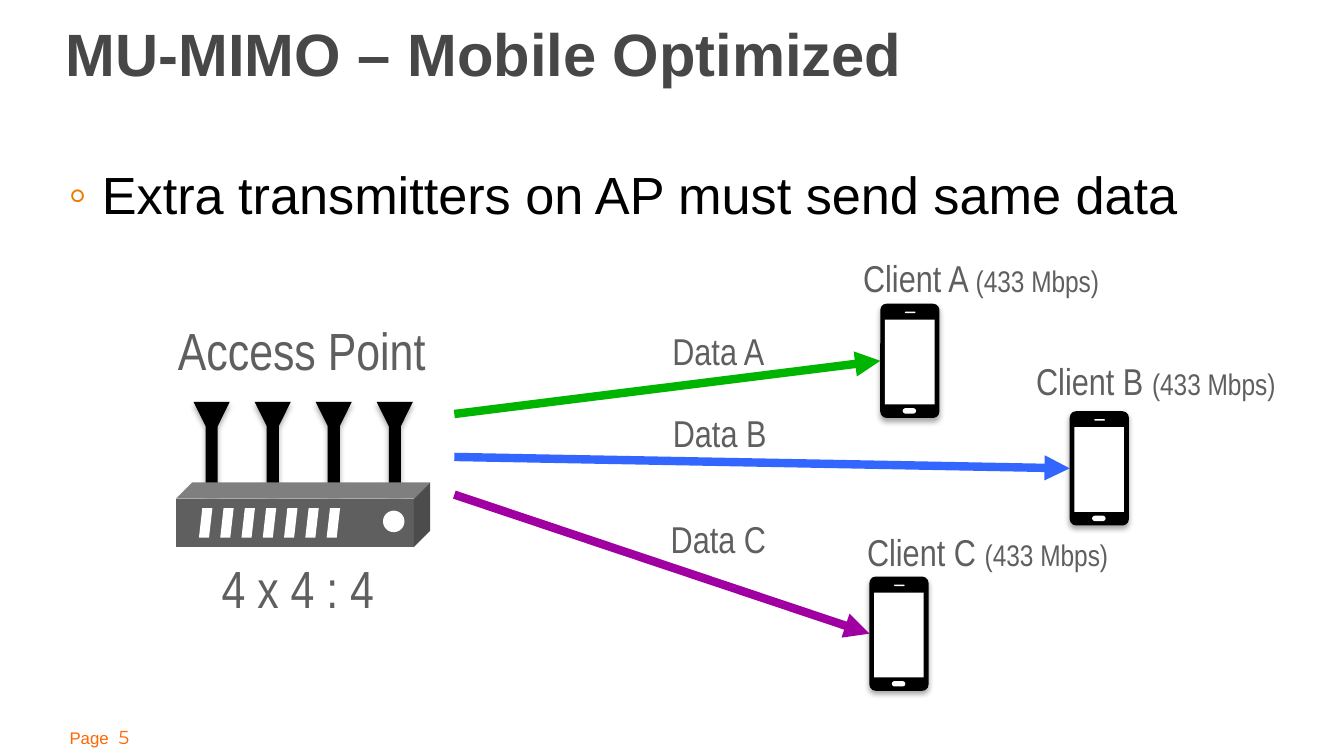
from lxml import etree
from pptx import Presentation
from pptx.dml.color import RGBColor
from pptx.enum import shapes, text
from pptx.oxml import ns
from pptx.util import Pt

COLORS = {"title": "474747", "label": "5F5F5F", "body": "000000", "bullet": "F07800",
          "page": "FF6600", "black": "000000", "white": "FFFFFF",
          "green": "00B500", "blue": "3366FF", "purple": "A000A2"}
NARROW = "Arial Narrow"

TITLE = "MU-MIMO – Mobile Optimized"
BULLET = "Extra transmitters on AP must send same data"
RATE = "(433 Mbps)"
# text, left, top, width, height, size
AP_LABELS = [("Access Point", 72.7, 167, 177.8, 41, 28),
             ("4 x 4 : 4", 99.4, 294.5, 120.2, 41, 28)]
# name, phone corner, label box, data label corner, arrow start height, colour
CLIENTS = [
    ("A", (471.6, 162.7), (439.9, 133.2, 171.4, 31.7), (334.1, 172.1), 221.8, "green"),
    ("B", (573.1, 220.3), (533.5, 188.6, 171.4, 51.1), (334.8, 216), 244.8, "blue"),
    ("C", (465.8, 308.9), (440.6, 280.1, 177.1, 55.4), (334.1, 272.9), 265, "purple"),
]
ARROW_LEFT = 243.4
DATA_SIZE = (101.5, 31.7)
PHONE_SIZE = (31.7, 61.2)
# kind, offset in phone, size, corner rounding
PHONE_PARTS = [("RECTANGLE", 2.5, 8.6, 26.6, 45.4, None),
               ("ROUNDED_RECTANGLE", 12, 56, 7.2, 2.9, 0.5),
               ("ROUNDED_RECTANGLE", 13.2, 4.3, 5.6, 0.8, 0.5)]
ANTENNA = [(0, 0), (19.4, 0), (13, 13), (13, 49.7), (6.5, 49.7), (6.5, 13)]
ANTENNA_START, ANTENNA_STEP, ANTENNA_COUNT = (103.7, 215.3), 32.7, 4
STRIPE_START, STRIPE_STEP, STRIPE_COUNT = (106.6, 272.2), 11.4, 7

presentation = Presentation()
presentation.slide_width, presentation.slide_height = Pt(720), Pt(405)
slide = presentation.slides.add_slide(presentation.slide_layouts[6])


def rgb(name):
    return RGBColor.from_string(COLORS[name])


def child(parent, tag, **attributes):
    return etree.SubElement(parent, ns.qn(tag), attributes)


def paint(shape, color, shadow=False):
    shape.fill.solid()
    shape.fill.fore_color.rgb = rgb(color)
    shape.line.fill.background()
    shape.shadow.inherit = False
    if shadow:
        effects = shape._element.spPr.find(ns.qn("a:effectLst"))
        outer = child(effects, "a:outerShdw", blurRad=str(Pt(3.1)), dist=str(Pt(1.8)),
                      dir="5400000", rotWithShape="0")
        child(child(outer, "a:srgbClr", val=COLORS["black"]), "a:alpha", val="35000")


def add_part(kind, left, top, width, height, color, rounding=None, shadow=False):
    shape = slide.shapes.add_shape(getattr(shapes.MSO_SHAPE, kind),
                                   Pt(left), Pt(top), Pt(width), Pt(height))
    if rounding is not None:
        shape.adjustments[0] = rounding
    paint(shape, color, shadow)
    return shape


def add_text(box, runs, centered=True, wrap=True, inset=3.6):
    """Each run is (text, size, font, colour, bold)."""
    frame = slide.shapes.add_textbox(*map(Pt, box)).text_frame
    frame.word_wrap = wrap
    frame.margin_top = Pt(inset)
    paragraph = frame.paragraphs[0]
    paragraph.alignment = text.PP_ALIGN.CENTER if centered else text.PP_ALIGN.LEFT
    for words, size, font, color, bold in runs:
        run = paragraph.add_run()
        run.text = words
        run.font.size, run.font.name, run.font.bold = Pt(size), font, bold
        run.font.color.rgb = rgb(color)
    return paragraph


def add_label(box, *runs):
    add_text(box, [(words, size, NARROW, "label", False) for words, size in runs])


def add_access_point():
    left, top = ANTENNA_START
    for index in range(ANTENNA_COUNT):
        points = [(Pt(left + index * ANTENNA_STEP + x), Pt(top + y)) for x, y in ANTENNA]
        builder = slide.shapes.build_freeform(*points[0])
        builder.add_line_segments(points[1:], close=True)
        paint(builder.convert_to_shape(), "black", shadow=True)
    add_part("CUBE", 94.3, 258.5, 136.1, 34.6, "label")
    left, top = STRIPE_START
    for index in range(STRIPE_COUNT):
        add_part("PARALLELOGRAM", left + index * STRIPE_STEP, top, 7.2, 15.8, "white")
    add_part("OVAL", 205.2, 273.6, 11.5, 11.5, "white")
    for words, *box, size in AP_LABELS:
        add_label(box, (words, size))


def add_phone(left, top):
    body = add_part("ROUNDED_RECTANGLE", left, top, *PHONE_SIZE, "black", 0.108, shadow=True)
    for kind, x, y, width, height, rounding in PHONE_PARTS:
        add_part(kind, left + x, top + y, width, height, "white", rounding)
    return body


def add_arrow(top, phone, color):
    arrow = slide.shapes.add_connector(shapes.MSO_CONNECTOR.STRAIGHT,
                                       Pt(ARROW_LEFT), Pt(top), phone.left, phone.top)
    arrow.end_connect(phone, 1)
    arrow.line.color.rgb = rgb(color)
    arrow.line.width = Pt(4.5)
    child(arrow.line._get_or_add_ln(), "a:tailEnd", type="triangle")
    child(arrow._element.spPr, "a:effectLst")


add_text((30.2, 385.2, 54.7, 19.4),
         [("Page ", 9, "Arial", "page", False), (" ", 10, "Arial", "page", True),
          ("5", 10, "Montserrat", "page", False)], centered=False, wrap=False)
add_text((28.1, 2.2, 642.2, 40.3), [(TITLE, 32, "Arial", "title", True)],
         centered=False, inset=7)

bullet = add_text((29.5, 84.2, 673.2, 41.8), [(BULLET, 28, "Arial", "body", False)],
                  centered=False, inset=5)
bullet.line_spacing = Pt(31.6)
properties = bullet._p.get_or_add_pPr()
properties.set("marL", str(Pt(18)))
properties.set("indent", str(-Pt(18)))
child(child(properties, "a:buClr"), "a:srgbClr", val=COLORS["bullet"])
child(properties, "a:buFont", typeface="Arial")
child(properties, "a:buChar", char="◦")

add_access_point()
for name, corner, label_box, data_corner, arrow_top, color in CLIENTS:
    phone = add_phone(*corner)
    add_arrow(arrow_top, phone, color)
    add_label(data_corner + DATA_SIZE, (f"Data {name}", 20))
    add_label(label_box, (f"Client {name} ", 20), (RATE, 16))

presentation.save("out.pptx")
